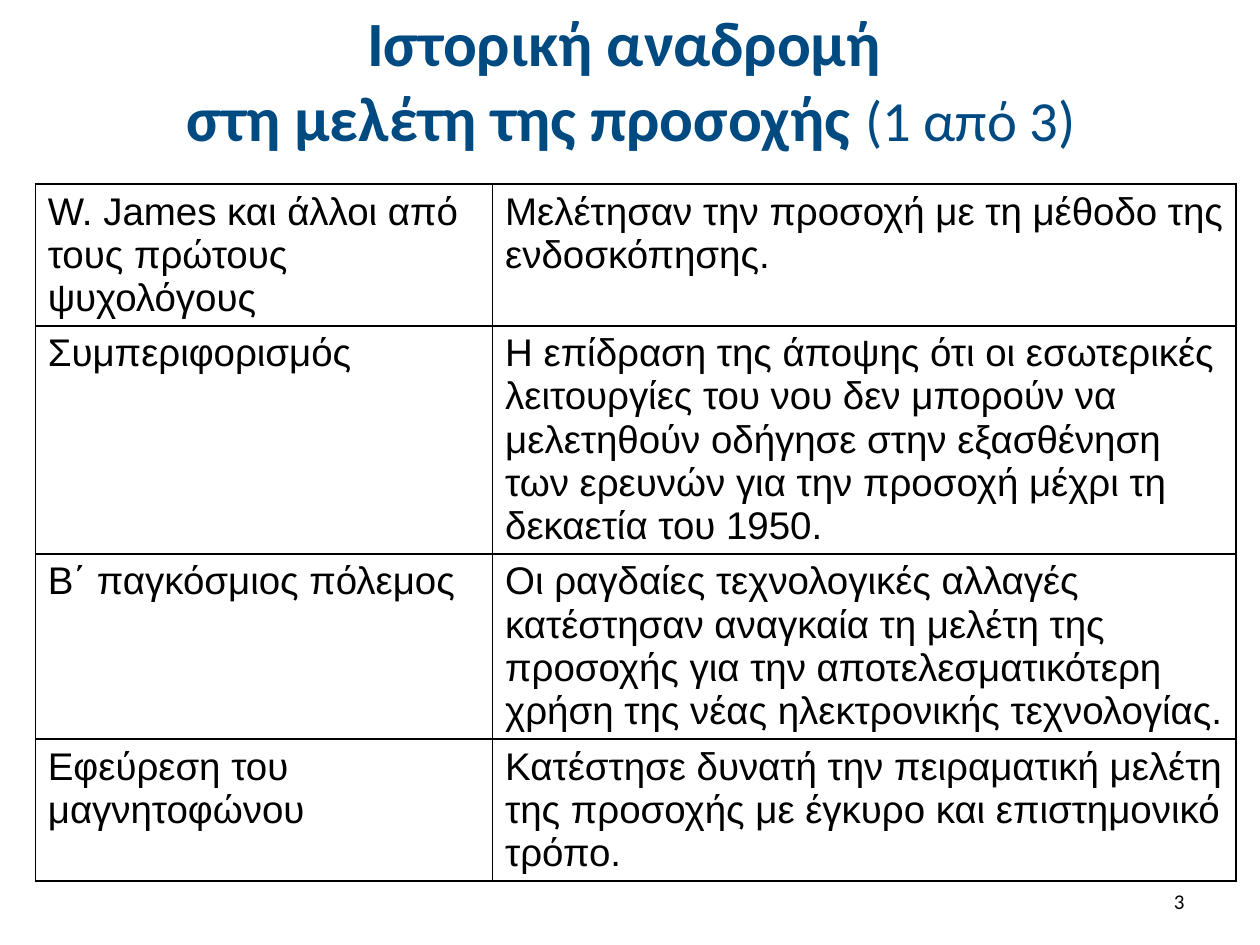
"""Build a slide with a table on the history of attention research."""
from lxml import etree
from pptx import Presentation
from pptx.dml.color import RGBColor
from pptx.enum.text import MSO_ANCHOR, PP_ALIGN
from pptx.oxml.ns import qn
from pptx.util import Inches, Pt

MIDDLE = MSO_ANCHOR.MIDDLE
CENTER, RIGHT = PP_ALIGN.CENTER, PP_ALIGN.RIGHT
BLACK = RGBColor(0x00, 0x00, 0x00)
BLUE = RGBColor(0x00, 0x4A, 0x82)

ROWS = [
    (1.12, "W. James και άλλοι από τους πρώτους ψυχολόγους",
     "Μελέτησαν την προσοχή με τη μέθοδο της ενδοσκόπησης."),
    (1.81, "Συμπεριφορισμός",
     "Η επίδραση της άποψης ότι οι εσωτερικές λειτουργίες του νου δεν "
     "μπορούν να μελετηθούν οδήγησε στην εξασθένηση των ερευνών για την "
     "προσοχή μέχρι τη δεκαετία του 1950."),
    (1.47, "Β΄ παγκόσμιος πόλεμος",
     "Οι ραγδαίες τεχνολογικές αλλαγές κατέστησαν αναγκαία τη μελέτη της "
     "προσοχής για την αποτελεσματικότερη χρήση της νέας ηλεκτρονικής "
     "τεχνολογίας."),
    (1.12, "Εφεύρεση του μαγνητοφώνου",
     "Κατέστησε δυνατή την πειραματική μελέτη της προσοχής με έγκυρο και "
     "επιστημονικό τρόπο."),
]


def add_run(para, text, size, face, color, bold=False):
    run = para.add_run()
    run.text = text
    font = run.font
    font.size, font.name, font.bold = Pt(size), face, bold
    font.color.rgb = color


def add_edges(cell):
    props = cell._tc.get_or_add_tcPr()
    for spot, side in enumerate(("a:lnL", "a:lnR", "a:lnT", "a:lnB")):
        line = etree.Element(qn(side), w=str(Pt(1)))
        fill = etree.SubElement(line, qn("a:solidFill"))
        etree.SubElement(fill, qn("a:srgbClr"), val=str(BLACK))
        props.insert(spot, line)


deck = Presentation()
deck.slide_width, deck.slide_height = Inches(10), Inches(7.5)
slide = deck.slides.add_slide(deck.slide_layouts[5])

title = slide.shapes.title
title.left, title.top = Inches(0.51), Inches(0.13)
title.width, title.height = Inches(9), Inches(0.99)
frame = title.text_frame
frame.vertical_anchor = MIDDLE
para = frame.paragraphs[0]
para.alignment = CENTER
add_run(para, "Ιστορική αναδρομή ", 36, "Calibri", BLUE, True)
para.add_line_break()
add_run(para, "στη μελέτη της προσοχής ", 36, "Calibri", BLUE, True)
add_run(para, "(1 από 3)", 32.4, "Calibri", BLUE)

table = slide.shapes.add_table(
    len(ROWS), 2, Inches(0.28), Inches(1.46), Inches(9.53), Inches(5.52)).table
table.first_row = table.horz_banding = False
for col, width in zip(table.columns, (3.63, 5.9)):
    col.width = Inches(width)
for row, (height, *texts) in zip(table.rows, ROWS):
    row.height = Inches(height)
    for cell, text in zip(row.cells, texts):
        cell.margin_right = Inches(0.08)
        cell.fill.background()
        add_edges(cell)
        add_run(cell.text_frame.paragraphs[0], text, 22, "Arial", BLACK)

number = slide.shapes.add_textbox(
    Inches(7.17), Inches(6.95), Inches(2.33), Inches(0.4))
frame = number.text_frame
frame.word_wrap = True
frame.vertical_anchor = MIDDLE
para = frame.paragraphs[0]
para.alignment = RIGHT
add_run(para, "3", 12, "Calibri", BLACK)

deck.save("out.pptx")
